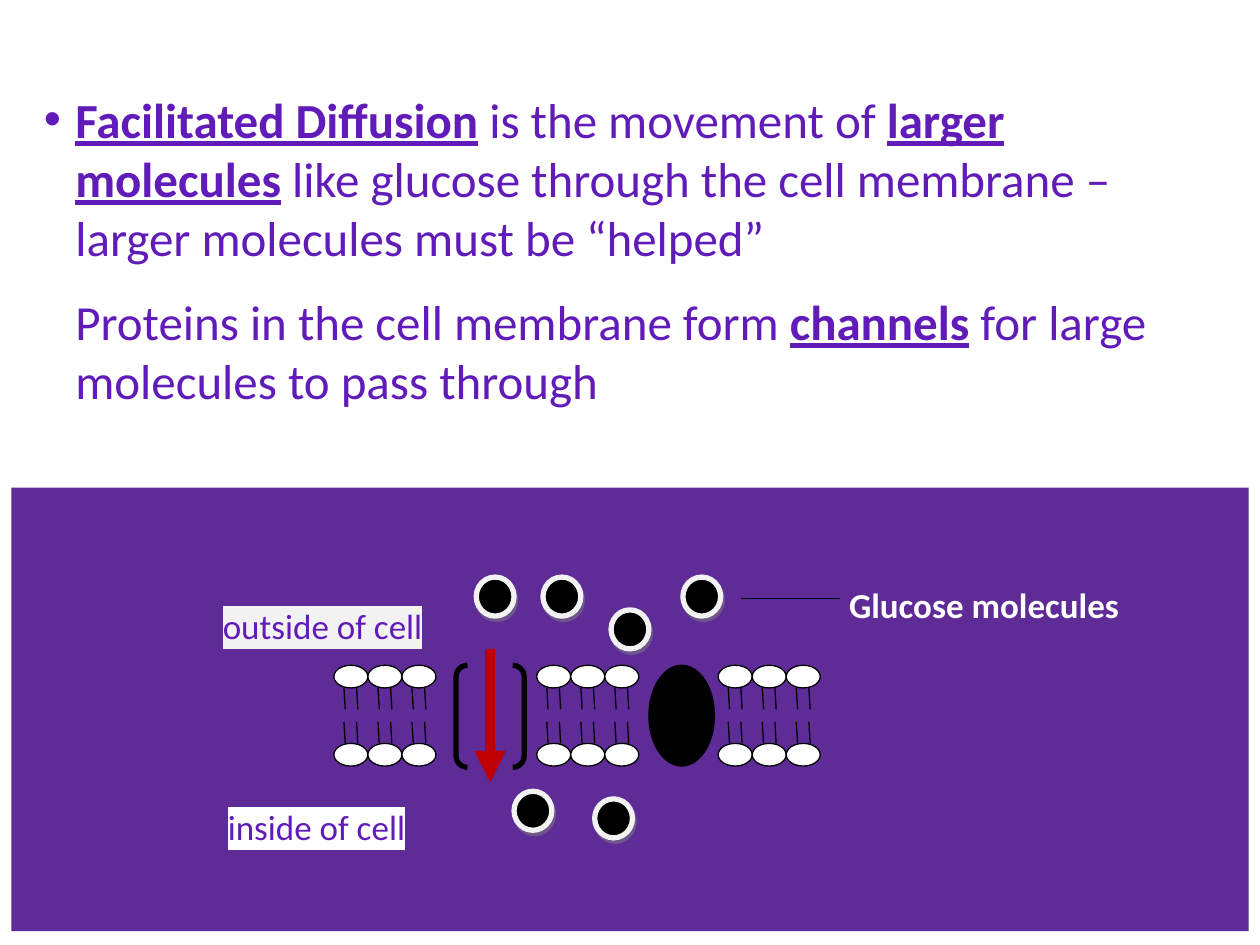
from pptx import Presentation
from pptx.dml.color import RGBColor
from pptx.enum.shapes import MSO_CONNECTOR, MSO_SHAPE
from pptx.enum.text import MSO_ANCHOR
from pptx.oxml import parse_xml
from pptx.oxml.ns import nsdecls
from pptx.util import Inches, Pt

THEME = dict(
    font="Calibri", body=28, label=20,
    purple="611BB8", panel="5E2B97", white="FFFFFF", pale="F2F2F2",
    black="000000", red="C00000", shadow="7F7F7F",
    thin=0.75, thick=3, arrow=6,
)

# Each run is (wording, is a key term)
DEFINITION = [
    ("Facilitated Diffusion", True),
    (" is the movement of ", False),
    ("larger molecules", True),
    (" like glucose through the cell membrane – larger molecules must be “helped”", False),
]
EXPLANATION = [
    ("Proteins in the cell membrane form ", False),
    ("channels", True),
    (" for large molecules to pass through", False),
]
LABELS = [
    ("outside of cell", (1.67, 4.75, 2.17, 0.99), dict(color="purple", highlight="pale")),
    ("inside of cell", (1.71, 6.34, 2.57, 0.92), dict(color="purple", highlight="white")),
    ("Glucose molecules", (6.64, 4.58, 2.36, 0.56), dict(color="white", bold=True)),
]
PANEL = (0.09, 3.87, 9.82, 3.52)
CHANNEL = (3.62, 5.28, 0.54, 0.81)
PROTEIN = (5.15, 5.28, 0.52, 0.8)
LIPID_BLOCKS = [2.65, 4.26, 5.7]
LIPIDS_PER_BLOCK = 3
HEAD_WIDTH, HEAD_HEIGHT = 0.27, 0.18
OUTER_TOP, INNER_TOP = 5.28, 5.9
TAIL_OFFSETS, TAIL_LENGTH, TAIL_SLANT = (0.08, 0.18), 0.17, 0.01
GLUCOSE = [(3.78, 4.58), (4.31, 4.58), (4.85, 4.84), (5.42, 4.58), (4.72, 6.34), (4.08, 6.28)]
GLUCOSE_SIZE = (0.3, 0.31)

prs = Presentation()
prs.slide_width, prs.slide_height = Inches(10), Inches(7.5)
slide = prs.slides.add_slide(prs.slide_layouts[6])


def rgb(name):
    return RGBColor.from_string(THEME[name])


def add_shape(preset, box, fill=None, line=None, width="thin"):
    shape = slide.shapes.add_shape(preset, *map(Inches, box))
    shape.shadow.inherit = False
    if fill:
        shape.fill.solid()
        shape.fill.fore_color.rgb = rgb(fill)
    else:
        shape.fill.background()
    if line:
        shape.line.color.rgb = rgb(line)
        shape.line.width = Pt(THEME[width])
    else:
        shape.line.fill.background()
    return shape


def add_line(start, end, color="black", width="thin", arrow=False):
    line = slide.shapes.add_connector(MSO_CONNECTOR.STRAIGHT, *map(Inches, (*start, *end)))
    line.line.color.rgb = rgb(color)
    line.line.width = Pt(THEME[width])
    if arrow:
        line.line._get_or_add_ln().append(
            parse_xml(f'<a:tailEnd {nsdecls("a")} type="triangle"/>'))
    line._element.spPr.append(parse_xml(f'<a:effectLst {nsdecls("a")}/>'))


def add_run(paragraph, wording, size="label", color="purple", bold=False,
            underline=False, highlight=None):
    run = paragraph.add_run()
    run.text = wording
    font = run.font
    font.size, font.bold, font.underline = Pt(THEME[size]), bold, underline
    font.color.rgb = rgb(color)
    if highlight:
        run._r.get_or_add_rPr().append(parse_xml(
            f'<a:highlight {nsdecls("a")}><a:srgbClr val="{THEME[highlight]}"/></a:highlight>'))
    font.name = THEME["font"]


def add_text_frame(box):
    frame = slide.shapes.add_textbox(*map(Inches, box)).text_frame
    frame.word_wrap = True
    return frame


def add_body():
    frame = add_text_frame((0.25, 0.6, 9.5, 3.16))
    frame.vertical_anchor = MSO_ANCHOR.MIDDLE
    frame.margin_bottom = Inches(0.45)
    definition, explanation = frame.paragraphs[0], frame.add_paragraph()
    for paragraph, runs in ((definition, DEFINITION), (explanation, EXPLANATION)):
        paragraph._p.get_or_add_pPr().set("marL", str(Inches(0.25)))
        for wording, key_term in runs:
            add_run(paragraph, wording, size="body", bold=key_term, underline=key_term)
    explanation.space_before = Pt(14.6)
    bullet = definition._p.get_or_add_pPr()
    bullet.set("indent", str(-Inches(0.25)))
    for xml in (f'<a:buClr {nsdecls("a")}><a:srgbClr val="{THEME["purple"]}"/></a:buClr>',
                f'<a:buFont {nsdecls("a")} typeface="Arial"/>',
                f'<a:buChar {nsdecls("a")} char="•"/>'):
        bullet.append(parse_xml(xml))


def add_lipid(left, top, tail_start, direction):
    """Draw a head and its two tails; direction is 1 for tails down, -1 for up."""
    add_shape(MSO_SHAPE.OVAL, (left, top, HEAD_WIDTH, HEAD_HEIGHT), "white", "black")
    for offset in TAIL_OFFSETS:
        x = left + offset + (TAIL_SLANT if direction < 0 else 0)
        add_line((x, tail_start),
                 (x + direction * TAIL_SLANT, tail_start + direction * TAIL_LENGTH))


def add_glucose(left, top):
    molecule = add_shape(MSO_SHAPE.OVAL, (left, top, *GLUCOSE_SIZE), "black", "pale", "thick")
    effects = molecule._element.spPr.find(
        "{http://schemas.openxmlformats.org/drawingml/2006/main}effectLst")
    effects.append(parse_xml(
        f'<a:outerShdw {nsdecls("a")} dist="{Pt(2.2)}" dir="{63 * 60000}">'
        f'<a:srgbClr val="{THEME["shadow"]}"><a:alpha val="50000"/></a:srgbClr></a:outerShdw>'))


add_shape(MSO_SHAPE.RECTANGLE, PANEL, "panel")
add_body()
for wording, box, style in LABELS:
    add_run(add_text_frame(box).paragraphs[0], wording, **style)

for block_left in LIPID_BLOCKS:
    for i in range(LIPIDS_PER_BLOCK):
        lipid_left = block_left + i * HEAD_WIDTH
        add_lipid(lipid_left, OUTER_TOP, OUTER_TOP + HEAD_HEIGHT, 1)
        add_lipid(lipid_left, INNER_TOP, INNER_TOP, -1)

add_shape(MSO_SHAPE.DOUBLE_BRACKET, CHANNEL, line="black", width="thick")
add_shape(MSO_SHAPE.OVAL, PROTEIN, "black", "black")
add_line((5.88, 4.75), (6.67, 4.75))
add_line((3.89, 5.15), (3.89, 6.21), "red", "arrow", arrow=True)
for position in GLUCOSE:
    add_glucose(*position)

prs.save("out.pptx")
